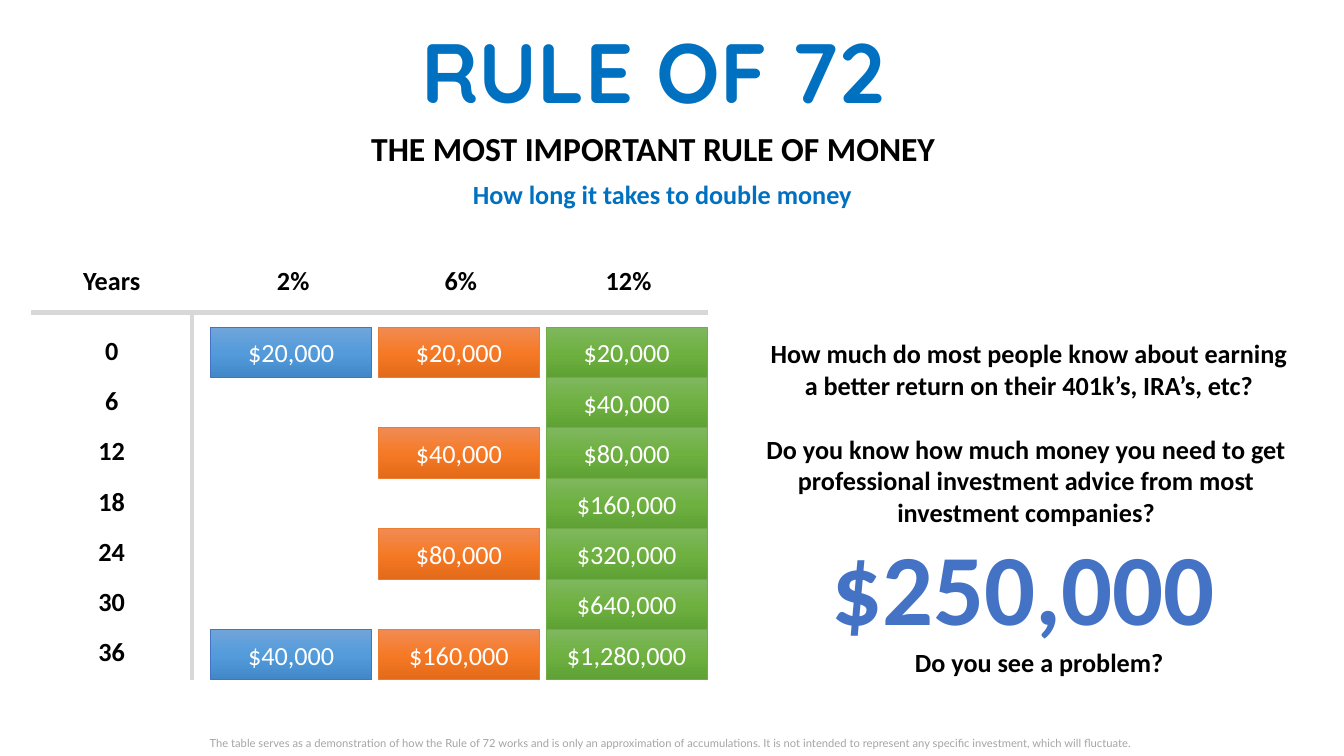
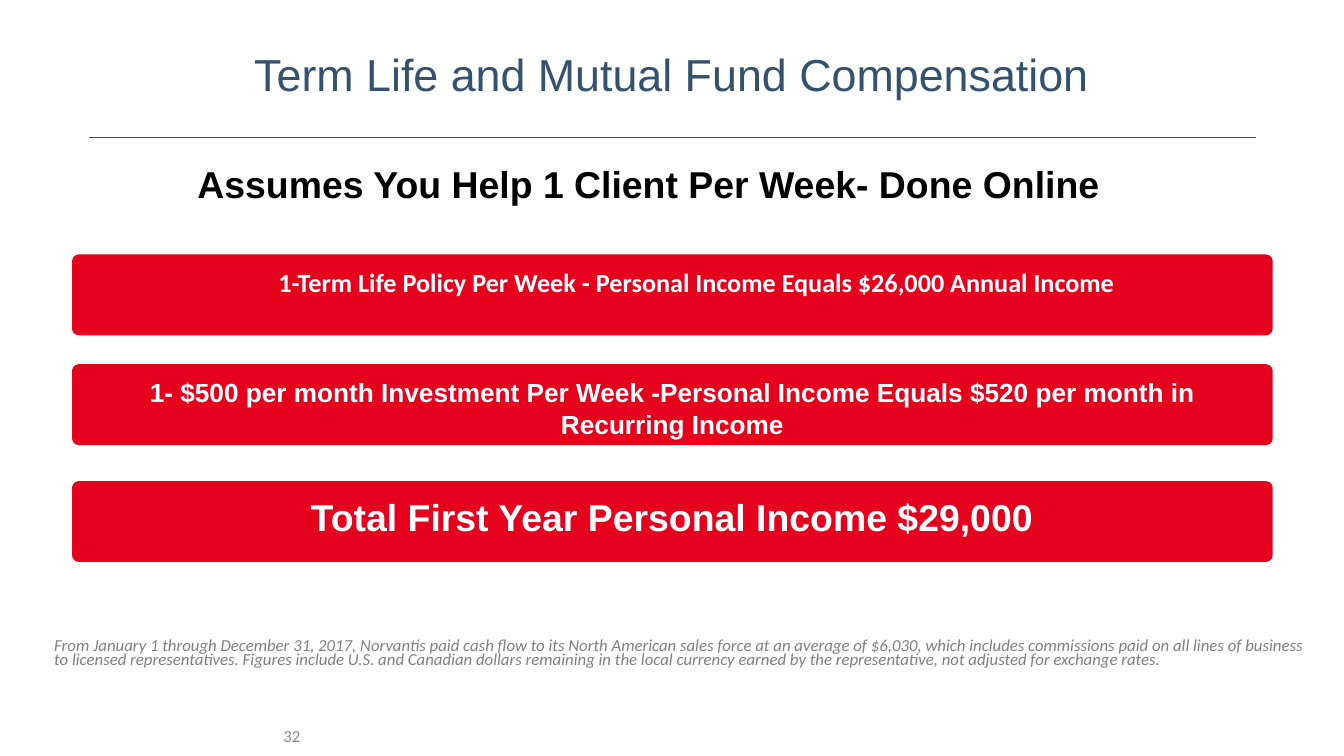
"""Build two slides on the Rule of 72 and first-year compensation."""
from copy import deepcopy
from dataclasses import dataclass
from typing import NamedTuple

from lxml import etree
from pptx import Presentation
from pptx.dml.color import RGBColor
from pptx.enum.shapes import MSO_CONNECTOR, MSO_SHAPE
from pptx.enum.text import MSO_ANCHOR, MSO_AUTO_SIZE, PP_ALIGN
from pptx.oxml.ns import qn
from pptx.util import Pt

LEFT, CENTER, RIGHT = PP_ALIGN.LEFT, PP_ALIGN.CENTER, PP_ALIGN.RIGHT
TOP, MIDDLE = MSO_ANCHOR.TOP, MSO_ANCHOR.MIDDLE
RECTANGLE, ROUNDED = MSO_SHAPE.RECTANGLE, MSO_SHAPE.ROUNDED_RECTANGLE
STRAIGHT = MSO_CONNECTOR.STRAIGHT
NO_AUTOFIT = MSO_AUTO_SIZE.NONE


def color(value: str) -> RGBColor:
    """Read a hexadecimal colour."""
    return RGBColor.from_string(value)


@dataclass(frozen=True)
class Theme:
    """Colours, fonts and type sizes of the deck."""
    black: RGBColor = color("000000")
    white: RGBColor = color("FFFFFF")
    bright_blue: RGBColor = color("0070C0")
    blue: RGBColor = color("4472C4")
    orange: RGBColor = color("ED7D31")
    green: RGBColor = color("70AD47")
    slate: RGBColor = color("34526F")
    red: RGBColor = color("E4021D")
    rule: RGBColor = color("D8D8D8")
    disclaimer: RGBColor = color("A5A5A5")
    note: RGBColor = color("808080")
    number: RGBColor = color("888888")
    body_font: str = "Calibri"
    heading_font: str = "Arial"
    display_font: str = "Quicksand"
    small_font: str = "Lato"
    tiny: float = 8
    small: float = 12
    body: float = 18.7
    subtitle: float = 24
    strong: float = 26.7
    heading: float = 32
    display: float = 60
    amount: float = 72


THEME = Theme()


class Area(NamedTuple):
    """A rectangle on the page, in points."""
    left: float
    top: float
    width: float
    height: float

    def lengths(self) -> list:
        """Give the four lengths for a shape call."""
        return [Pt(value) for value in self]


@dataclass(frozen=True)
class Rate:
    """One growth column: its rate, rows per doubling and colours."""
    label: str
    rows_per_doubling: int
    line: RGBColor
    gradient: tuple


class IncomeBar(NamedTuple):
    """One red bar: its top, text and type size."""
    top: float
    text: str
    size: float


YEARS = range(0, 37, 6)
PRINCIPAL = 20000
RATES = (
    Rate("2%", 6, THEME.blue, ("70A5DA", "539BDB", "4288C8")),
    Rate("6%", 2, THEME.orange, ("F08B54", "F67A26", "E36A18")),
    Rate("12%", 1, THEME.green, ("7FB75F", "6EB141", "5FA134")),
)
COLUMN_STEP, COLUMN_WIDTH = 119.8, 115
ROW_STEP, ROW_HEIGHT = 36, 36
LABEL_STEP, LABEL_HEIGHT = 35.8, 29
GRID_LEFT, GRID_TOP = 150.5, 233.7
YEAR_LEFT, HEADER_TOP = 22.3, 185
BAR_LEFT, BAR_WIDTH, BAR_HEIGHT = 53, 854.6, 54.7
INCOME_BARS = (
    IncomeBar(183.3, "", THEME.body),
    IncomeBar(261.7, "1- $500 per month Investment Per Week -Personal Income Equals "
              "$520 per month in Recurring Income", THEME.body),
    IncomeBar(345.2, "Total First Year Personal Income $29,000", THEME.strong),
)
NOTE = (
    "From January 1 through December 31, 2017, Norvantis paid cash flow to its North "
    "American sales force at an average of $6,030, which includes commissions paid on all "
    "lines of business to licensed representatives. Figures include U.S. and Canadian "
    "dollars remaining in the local currency earned by the representative, not adjusted "
    "for exchange rates."
)
DISCLAIMER = (
    "The table serves as a demonstration of how the Rule of 72 works and is only an "
    "approximation of accumulations. It is not intended to represent any specific "
    "investment, which will fluctuate."
)


def write_text(shape, *lines: str, size: float = THEME.body, ink: RGBColor = THEME.black,
               font: str = THEME.body_font, bold: bool = False, italic: bool = False,
               align=CENTER, anchor=TOP, spacing=1.0,
               inset: tuple = (7.2, 3.6)) -> None:
    """Fill a shape with one formatted paragraph per line."""
    frame = shape.text_frame
    frame.word_wrap = True
    frame.auto_size = NO_AUTOFIT
    frame.vertical_anchor = anchor
    frame.margin_left = frame.margin_right = Pt(inset[0])
    frame.margin_top = frame.margin_bottom = Pt(inset[1])
    for index, line in enumerate(lines):
        para = frame.add_paragraph() if index else frame.paragraphs[0]
        para.alignment = align
        para.line_spacing = spacing
        para.space_before = Pt(0)
        span = para.add_run()
        span.text = line
        span.font.name = font
        span.font.size = Pt(size)
        span.font.bold = bold
        span.font.italic = italic
        span.font.color.rgb = ink


def add_text(page, area: Area, *lines: str, **style) -> None:
    """Add a text box with formatted text."""
    write_text(page.shapes.add_textbox(*area.lengths()), *lines, **style)


def place(shape, area: Area) -> None:
    """Move and size a placeholder."""
    shape.left, shape.top, shape.width, shape.height = area.lengths()


def add_rule(page, start: tuple, end: tuple, ink: RGBColor, weight: float) -> None:
    """Draw a straight line without a shadow."""
    rule = page.shapes.add_connector(STRAIGHT, *(Pt(value) for value in start + end))
    rule.line.color.rgb = ink
    rule.line.width = Pt(weight)
    etree.SubElement(rule.element.find(qn("p:spPr")), qn("a:effectLst"))


def add_block(page, kind, area: Area, line: RGBColor, weight: float):
    """Add an outlined shape without a shadow."""
    block = page.shapes.add_shape(kind, *area.lengths())
    block.shadow.inherit = False
    block.line.color.rgb = line
    block.line.width = Pt(weight)
    return block


def fill_gradient(shape, colors: tuple) -> None:
    """Fill a shape from top to bottom with three colours."""
    shape.fill.gradient()
    shape.fill.gradient_angle = 270
    stops = shape.element.find(".//" + qn("a:gsLst"))
    stops.append(deepcopy(stops[0]))
    for index, (stop, value) in enumerate(zip(shape.fill.gradient_stops, colors)):
        stop.position = index / 2
        stop.color.rgb = color(value)


def remove_bullet(shape) -> None:
    """Clear the bullet and indent of a shape's first paragraph."""
    properties = shape.text_frame.paragraphs[0]._p.get_or_add_pPr()
    properties.set("marL", "0")
    properties.set("indent", "0")
    etree.SubElement(properties, qn("a:buNone"))


def draw_rate(page, column: int, rate: Rate) -> None:
    """Draw one rate heading and its doubling amounts."""
    left = GRID_LEFT + column * COLUMN_STEP
    add_text(page, Area(left + 1.4, HEADER_TOP, COLUMN_WIDTH, LABEL_HEIGHT),
             rate.label, bold=True)
    for row in range(0, len(YEARS), rate.rows_per_doubling):
        amount = PRINCIPAL * 2 ** (row // rate.rows_per_doubling)
        area = Area(left, GRID_TOP + row * ROW_STEP, COLUMN_WIDTH, ROW_HEIGHT)
        block = add_block(page, RECTANGLE, area, rate.line, 0.75)
        fill_gradient(block, rate.gradient)
        write_text(block, f"${amount:,}", ink=THEME.white, anchor=MIDDLE, inset=(7.2, 7.2))


def build_rule_page(deck) -> None:
    """Build the Rule of 72 slide."""
    page = deck.slides.add_slide(deck.slide_layouts[5])
    title = page.shapes.title
    place(title, Area(78.5, 14.4, 775.5, 80))
    write_text(title, "RULE OF 72", size=THEME.display, ink=THEME.bright_blue,
               font=THEME.display_font, bold=True, anchor=MIDDLE, spacing=0.9)
    add_text(page, Area(254, 87.8, 425, 36), "THE MOST IMPORTANT RULE OF MONEY",
             size=THEME.subtitle, bold=True)
    add_text(page, Area(293.8, 123.8, 358.6, 29), "How long it takes to double money",
             ink=THEME.bright_blue, bold=True)

    add_text(page, Area(YEAR_LEFT, HEADER_TOP, COLUMN_WIDTH, LABEL_HEIGHT), "Years", bold=True)
    for row, year in enumerate(YEARS):
        top = 235.4 + row * LABEL_STEP
        add_text(page, Area(YEAR_LEFT, top, COLUMN_WIDTH, LABEL_HEIGHT), str(year), bold=True)
    add_rule(page, (YEAR_LEFT, 223.2), (506, 223.2), THEME.rule, 3)
    add_rule(page, (137, 223.2), (137, 486), THEME.rule, 3)
    for column, rate in enumerate(RATES):
        draw_rate(page, column, rate)

    add_text(page, Area(533.5, 237.6, 403, 51), "How much do most people know about earning",
             "a better return on their 401k’s, IRA’s, etc?", bold=True)
    add_text(page, Area(531.4, 306, 403, 73), "Do you know how much money you need to get",
             "professional investment advice from most", "investment companies?", bold=True)
    add_text(page, Area(586.8, 371.5, 291, 94), "$250,000", size=THEME.amount,
             ink=THEME.blue, bold=True, align=LEFT)
    add_text(page, Area(604.8, 458, 275, 29), "Do you see a problem?", bold=True)
    add_text(page, Area(142.6, 522.7, 701.3, 17.3), DISCLAIMER, size=THEME.tiny,
             ink=THEME.disclaimer, font=THEME.small_font, align=LEFT)


def build_income_page(deck) -> None:
    """Build the compensation slide."""
    page = deck.slides.add_slide(deck.slide_layouts[1])
    wide = (9.4, 5)
    title, body = page.placeholders
    place(title, Area(31.7, 34.6, 896.4, 53.3))
    write_text(title, "Term Life and Mutual Fund Compensation", size=THEME.heading,
               ink=THEME.slate, font=THEME.heading_font, spacing=0.85, inset=wide)
    add_rule(page, (63.4, 97.9), (897, 97.9), THEME.slate, 0.75)
    add_text(page, Area(40.3, 115.2, 846.7, 44.6),
             "Assumes You Help 1 Client Per Week- Done Online", size=THEME.strong,
             font=THEME.heading_font, bold=True, spacing=0.85, inset=wide)

    for bar in INCOME_BARS:
        area = Area(BAR_LEFT, bar.top, BAR_WIDTH, BAR_HEIGHT)
        block = add_block(page, ROUNDED, area, THEME.red, 3)
        block.adjustments[0] = 0.06
        block.fill.solid()
        block.fill.fore_color.rgb = THEME.red
        if bar.text:
            write_text(block, bar.text, size=bar.size, ink=THEME.white,
                       font=THEME.heading_font, bold=True, inset=(7, 6.5))

    place(body, Area(75.6, 188, 843.8, 39.6))
    write_text(body, "1-Term Life Policy Per Week - Personal Income Equals $26,000 Annual Income",
               ink=THEME.white, bold=True, spacing=0.9, inset=wide)
    remove_bullet(body)
    page.shapes.element.append(body.element)

    add_text(page, Area(31.7, 454.3, 918.7, 28), NOTE, size=THEME.small, ink=THEME.note,
             italic=True, align=LEFT, spacing=Pt(10))
    add_text(page, Area(0, 511.2, 224, 28.8), "32", size=THEME.small, ink=THEME.number,
             align=RIGHT, anchor=MIDDLE, inset=wide)


def main() -> None:
    """Build and save the deck."""
    deck = Presentation()
    deck.slide_width, deck.slide_height = Pt(960), Pt(540)
    build_rule_page(deck)
    build_income_page(deck)
    deck.save("out.pptx")


if __name__ == "__main__":
    main()
